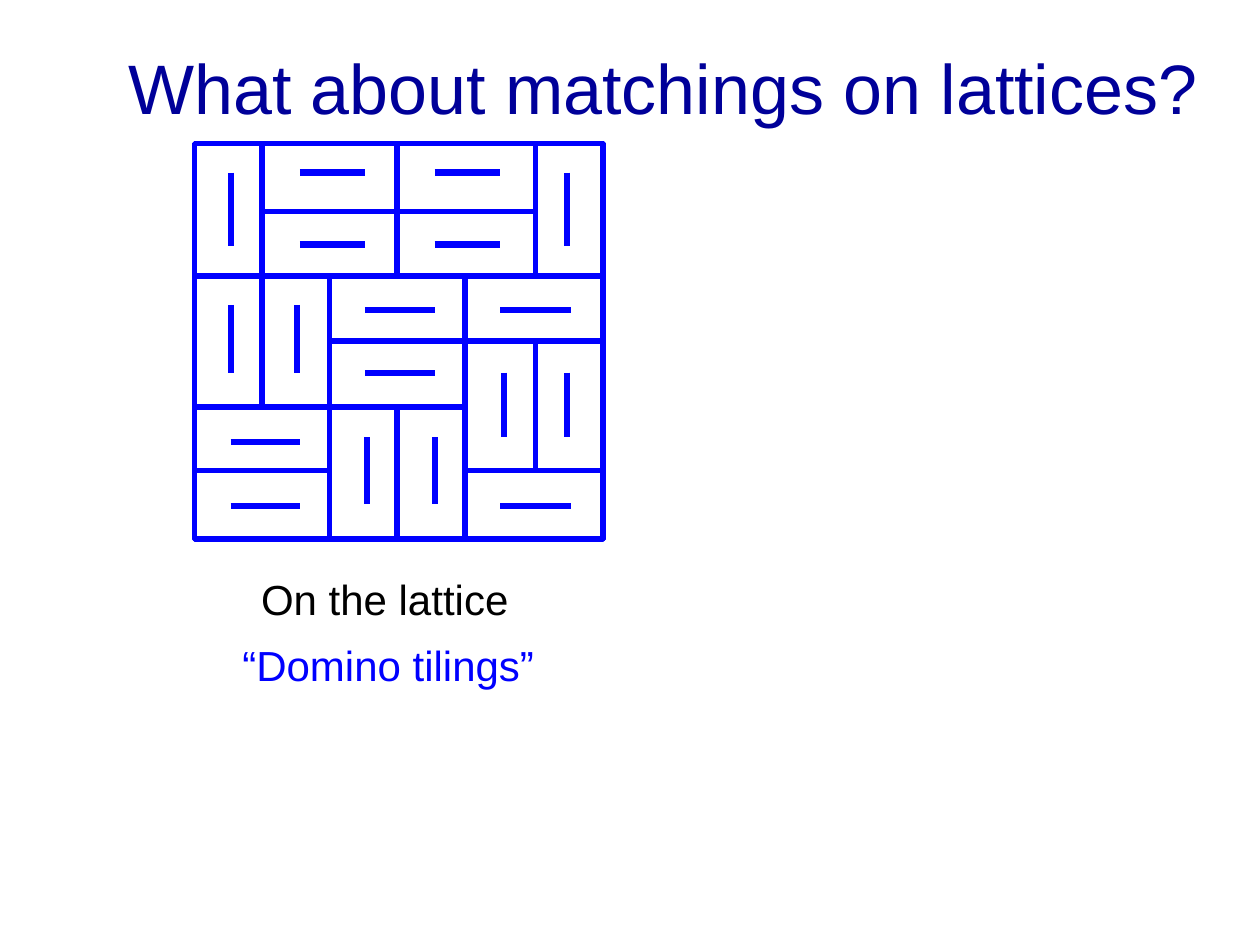
from lxml.etree import SubElement
from pptx import Presentation
from pptx.dml.color import RGBColor
from pptx.enum.shapes import MSO_CONNECTOR, MSO_SHAPE
from pptx.enum.text import MSO_ANCHOR, MSO_AUTO_SIZE, PP_ALIGN
from pptx.oxml.ns import qn
from pptx.util import Pt

COLORS = {"blue": "0000FF", "navy": "000099", "black": "000000"}
TITLE = "What about matchings on lattices?"

# Captions: text, (left, top, width, height), left inset, line spacing, color
CAPTIONS = [
    ("On the lattice", (102.2, 324, 404, 36), 47, 1.0, "black"),
    ("“Domino tilings”", (124.6, 372.2, 404, 26.6), 13.9, 0.6, "blue"),
]

# Grid lines of the 6 by 6 board
WALL_X = [111.2, 149.8, 188.3, 226.8, 265.7, 306, 344.5]
WALL_Y = [82, 121, 157.7, 194.8, 232.6, 268.9, 308.2]
# Walls between dominoes: grid line, first and last crossing grid line
HORIZONTAL_WALLS = [(0, 0, 6), (1, 1, 5), (2, 0, 6), (3, 2, 6),
                    (4, 0, 4), (5, 0, 2), (5, 4, 6), (6, 0, 6)]
VERTICAL_WALLS = [(0, 0, 6), (1, 0, 4), (2, 2, 6), (3, 0, 2), (3, 4, 6),
                  (4, 2, 6), (5, 0, 2), (5, 3, 5), (6, 0, 6)]
WALL_THICKNESS = 1.2

# Matched edges: column and row of the first cell of each domino
VERTICAL_EDGES = {
    "x": [131.8, 169.9, 209.5, 248.4, 288, 324],
    "y": [98.6, 140.4, 174.2, 213, 249.8, 288],
    "step": (0, 1),
    "cells": [(0, 0), (5, 0), (0, 2), (1, 2), (4, 3), (5, 3), (2, 4), (3, 4)],
}
HORIZONTAL_EDGES = {
    "x": [131.8, 171.4, 208.5, 248.4, 286, 326.2],
    "y": [98.6, 139.7, 177.1, 213.1, 252.7, 289.4],
    "step": (1, 0),
    "cells": [(1, 0), (3, 0), (1, 1), (3, 1), (2, 2),
              (4, 2), (2, 3), (0, 4), (0, 5), (4, 5)],
}


def color(name):
    return RGBColor.from_string(COLORS[name])


def apply(target, values):
    for name, value in values.items():
        setattr(target, name, value)


def write(paragraph, text, size, color_name):
    run = paragraph.add_run()
    run.text = text
    apply(run.font, {"name": "Arial", "size": Pt(size)})
    run.font.color.rgb = color(color_name)


def add_edge(slide, start, end):
    points = [Pt(value) for value in (*start, *end)]
    edge = slide.shapes.add_connector(MSO_CONNECTOR.STRAIGHT, *points)
    edge.line.color.rgb = color("blue")
    edge.line.width = Pt(3.5)
    SubElement(edge._element.spPr, qn("a:effectLst"))


def add_wall(group, left, top, width, height):
    box = [Pt(value) for value in (left, top, width, height)]
    wall = group.shapes.add_shape(MSO_SHAPE.RECTANGLE, *box)
    wall.shadow.inherit = False
    wall.fill.solid()
    wall.fill.fore_color.rgb = color("blue")
    wall.line.color.rgb = color("blue")
    wall.line.width = Pt(2)


def add_caption(slide, text, box, inset, spacing, color_name):
    shape = slide.shapes.add_textbox(*[Pt(value) for value in box])
    frame = shape.text_frame
    apply(frame, {"word_wrap": True, "margin_left": Pt(inset),
                  "auto_size": MSO_AUTO_SIZE.SHAPE_TO_FIT_TEXT})
    paragraph = frame.paragraphs[0]
    paragraph.line_spacing = spacing
    # Space before, as half a line
    before = SubElement(paragraph._p.get_or_add_pPr(), qn("a:spcBef"))
    SubElement(before, qn("a:spcPct"), val="50000")
    write(paragraph, text, 24, color_name)


def main():
    presentation = Presentation()
    apply(presentation, {"slide_width": Pt(720), "slide_height": Pt(540)})
    slide = presentation.slides.add_slide(presentation.slide_layouts[5])

    # Title
    title = slide.shapes.title
    apply(title, {"left": Pt(54.7), "top": Pt(0),
                  "width": Pt(648), "height": Pt(98.6)})
    apply(title.text_frame, {"vertical_anchor": MSO_ANCHOR.MIDDLE,
                             "word_wrap": True,
                             "auto_size": MSO_AUTO_SIZE.NONE})
    paragraph = title.text_frame.paragraphs[0]
    paragraph.alignment = PP_ALIGN.CENTER
    write(paragraph, TITLE, 40, "navy")

    # Matched edges
    for edges in (VERTICAL_EDGES, HORIZONTAL_EDGES):
        x, y = edges["x"], edges["y"]
        across, down = edges["step"]
        for column, row in edges["cells"]:
            add_edge(slide, (x[column], y[row]),
                     (x[column + across], y[row + down]))

    # Domino walls
    board = slide.shapes.add_group_shape()
    half = WALL_THICKNESS / 2
    for row, first, last in HORIZONTAL_WALLS:
        add_wall(board, WALL_X[first], WALL_Y[row] - half,
                 WALL_X[last] - WALL_X[first], WALL_THICKNESS)
    for column, first, last in VERTICAL_WALLS:
        add_wall(board, WALL_X[column] - half, WALL_Y[first],
                 WALL_THICKNESS, WALL_Y[last] - WALL_Y[first])

    # Captions
    for caption in CAPTIONS:
        add_caption(slide, *caption)

    presentation.save("out.pptx")


if __name__ == "__main__":
    main()
